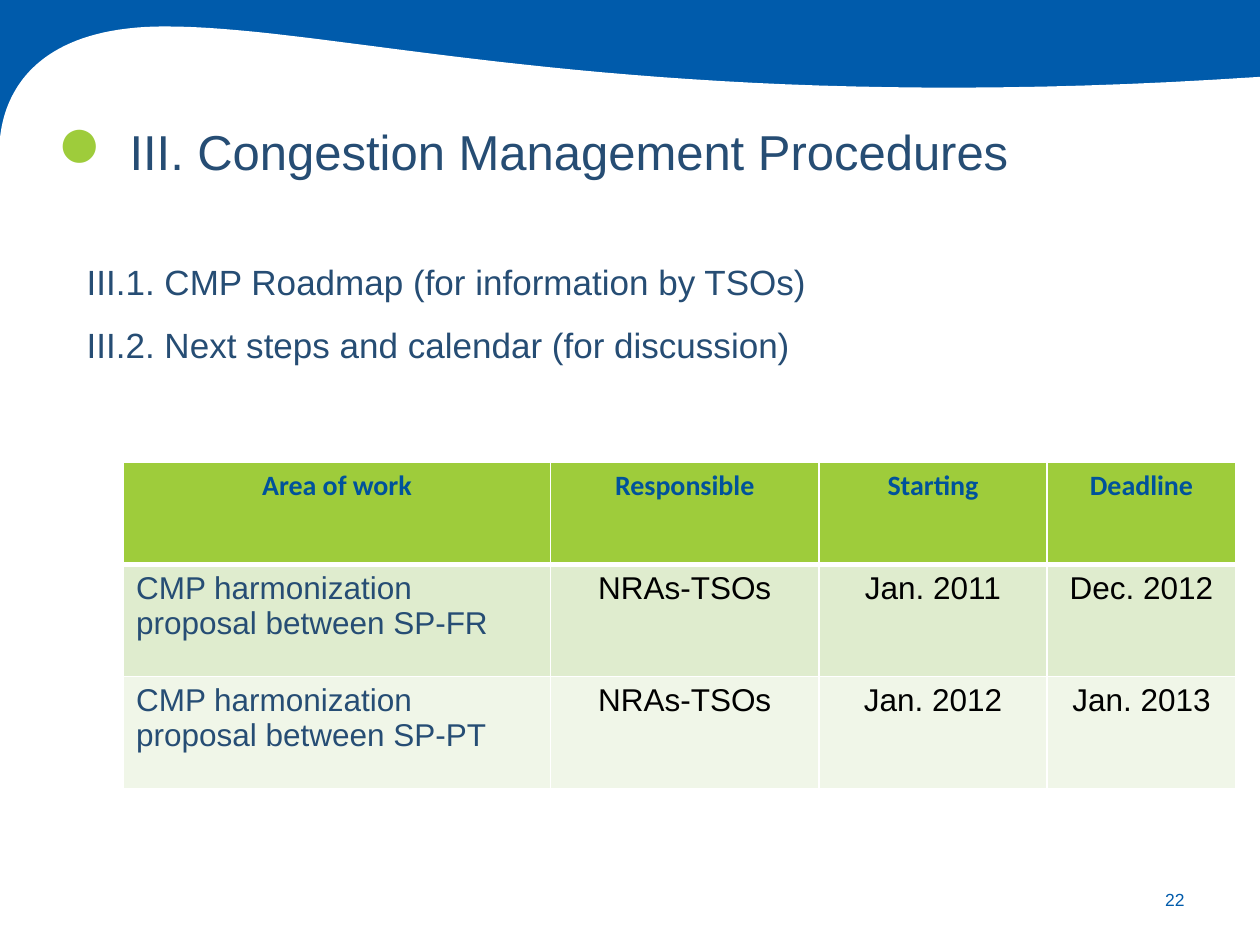
from lxml.etree import SubElement
from pptx import Presentation
from pptx.dml.color import RGBColor
from pptx.enum.shapes import MSO_SHAPE
from pptx.enum.text import MSO_ANCHOR, PP_ALIGN
from pptx.oxml.ns import qn
from pptx.util import Inches, Pt

# Content
TITLE = "III. Congestion Management Procedures"
AGENDA = [
    ("III.1. CMP Roadmap (for information by TSOs)", 1.0),
    ("III.2. Next steps and calendar (for discussion)", 1.5),
]
ROADMAP = [
    ("Area of work", "Responsible", "Starting", "Deadline"),
    ("CMP harmonization proposal between SP-FR", "NRAs-TSOs", "Jan. 2011", "Dec. 2012"),
    ("CMP harmonization proposal between SP-PT", "NRAs-TSOs", "Jan. 2012", "Jan. 2013"),
]
PAGE_NUMBER = "22"

COLORS = {
    "blue": "005BAB", "green": "9ECC3B", "navy": "264D74", "header": "00529B",
    "black": "000000", "white": "FFFFFF", "band1": "DFECCE", "band2": "F0F6E8",
}

# Layout, in inches
WIDTH, HEIGHT = 10, 7.5
COLUMNS = [3.39, 2.13, 1.81, 1.5]
ROWS = [0.81, 0.89, 0.89]
# Wave edge from right to left: start point, then cubic curves
WAVE_START = (WIDTH, 0.61)
WAVE = [
    [(5.1, 0.94), (2.76, 0.21), (1.31, 0.21)],
    [(0.23, 0.21), (0.03, 0.79), (0, 1.1)],
]
CURVE_STEPS = 40


def color(name):
    return RGBColor.from_string(COLORS[name])


def paint(shape, name):
    shape.fill.solid()
    shape.fill.fore_color.rgb = color(name)
    shape.line.fill.background()
    shape.shadow.inherit = False


def curve_points(start, curves):
    for first, second, end in curves:
        for step in range(1, CURVE_STEPS + 1):
            t = step / CURVE_STEPS
            weights = ((1 - t) ** 3, 3 * t * (1 - t) ** 2, 3 * t * t * (1 - t), t ** 3)
            corners = (start, first, second, end)
            yield tuple(sum(w * c[axis] for w, c in zip(weights, corners)) for axis in (0, 1))
        start = end


def write(paragraph, text, size, ink, align=PP_ALIGN.LEFT, font="Arial", bold=False):
    paragraph.alignment = align
    run = paragraph.add_run()
    run.text = text
    run.font.name, run.font.size, run.font.bold = font, Pt(size), bold
    run.font.color.rgb = color(ink)


def indent(paragraph, margin, first):
    properties = paragraph._p.get_or_add_pPr()
    properties.set("marL", str(Inches(margin)))
    properties.set("indent", str(Inches(first)))


def text_frame(slide, left, top, width, height, anchor=MSO_ANCHOR.TOP):
    box = slide.shapes.add_textbox(Inches(left), Inches(top), Inches(width), Inches(height))
    box.text_frame.word_wrap = True
    box.text_frame.vertical_anchor = anchor
    return box.text_frame


def add_borders(cell, bottom):
    # Borders come before the fill in the cell properties
    properties = cell._tc.get_or_add_tcPr()
    for side, points in (("lnL", 1), ("lnR", 1), ("lnT", 1), ("lnB", bottom)):
        line = SubElement(properties, qn(f"a:{side}"), w=str(Pt(points)))
        fill = SubElement(line, qn("a:solidFill"))
        SubElement(fill, qn("a:srgbClr"), val=COLORS["white"])


def add_background(slide):
    band = slide.shapes.add_shape(MSO_SHAPE.RECTANGLE, 0, 0, Inches(WIDTH), Inches(1.15))
    paint(band, "blue")
    outline = [WAVE_START, *curve_points(WAVE_START, WAVE), (0, HEIGHT), (WIDTH, HEIGHT)]
    start, *rest = [(Inches(x), Inches(y)) for x, y in outline]
    builder = slide.shapes.build_freeform(*start)
    builder.add_line_segments(rest)
    paint(builder.convert_to_shape(), "white")


def add_heading(slide):
    bullet = text_frame(slide, 0.35, 0.57, 0.55, 0.94, MSO_ANCHOR.BOTTOM).paragraphs[0]
    indent(bullet, 0.39, -0.39)
    write(bullet, "●", 44, "green", PP_ALIGN.CENTER)

    title = text_frame(slide, 0.83, 0.82, 7.8, 1.34).paragraphs[0]
    indent(title, 0.69, -0.59)
    title.line_spacing = 1.2
    write(title, TITLE, 28, "navy")


def add_agenda(slide):
    frame = text_frame(slide, 0.59, 2.02, 9.06, 0.94)
    for index, (topic, spacing) in enumerate(AGENDA):
        paragraph = frame.add_paragraph() if index else frame.paragraphs[0]
        paragraph.level = 1
        indent(paragraph, 0.5, -0.5)
        paragraph.line_spacing = spacing
        write(paragraph, topic, 20, "navy")


def add_roadmap(slide):
    table = slide.shapes.add_table(
        len(ROWS), len(COLUMNS), Inches(0.98), Inches(3.67),
        Inches(sum(COLUMNS)), Inches(sum(ROWS))).table
    for column, width in zip(table.columns, COLUMNS):
        column.width = Inches(width)
    fills = ("green", "band1", "band2")
    for r, (entries, height) in enumerate(zip(ROADMAP, ROWS)):
        table.rows[r].height = Inches(height)
        for c, entry in enumerate(entries):
            cell = table.cell(r, c)
            add_borders(cell, bottom=1 if r else 3)
            cell.fill.solid()
            cell.fill.fore_color.rgb = color(fills[r])
            paragraph = cell.text_frame.paragraphs[0]
            if r == 0:
                write(paragraph, entry, 16, "header", PP_ALIGN.CENTER, "Calibri", True)
            elif c == 0:
                write(paragraph, entry, 18, "navy")
            else:
                write(paragraph, entry, 18, "black", PP_ALIGN.CENTER)


def main():
    deck = Presentation()
    deck.slide_width, deck.slide_height = Inches(WIDTH), Inches(HEIGHT)
    slide = deck.slides.add_slide(deck.slide_layouts[6])
    add_background(slide)
    number = text_frame(slide, 8.94, 6.94, 0.56, 0.4, MSO_ANCHOR.MIDDLE)
    write(number.paragraphs[0], PAGE_NUMBER, 10, "blue", PP_ALIGN.RIGHT)
    add_heading(slide)
    add_roadmap(slide)
    add_agenda(slide)
    deck.save("out.pptx")


if __name__ == "__main__":
    main()
